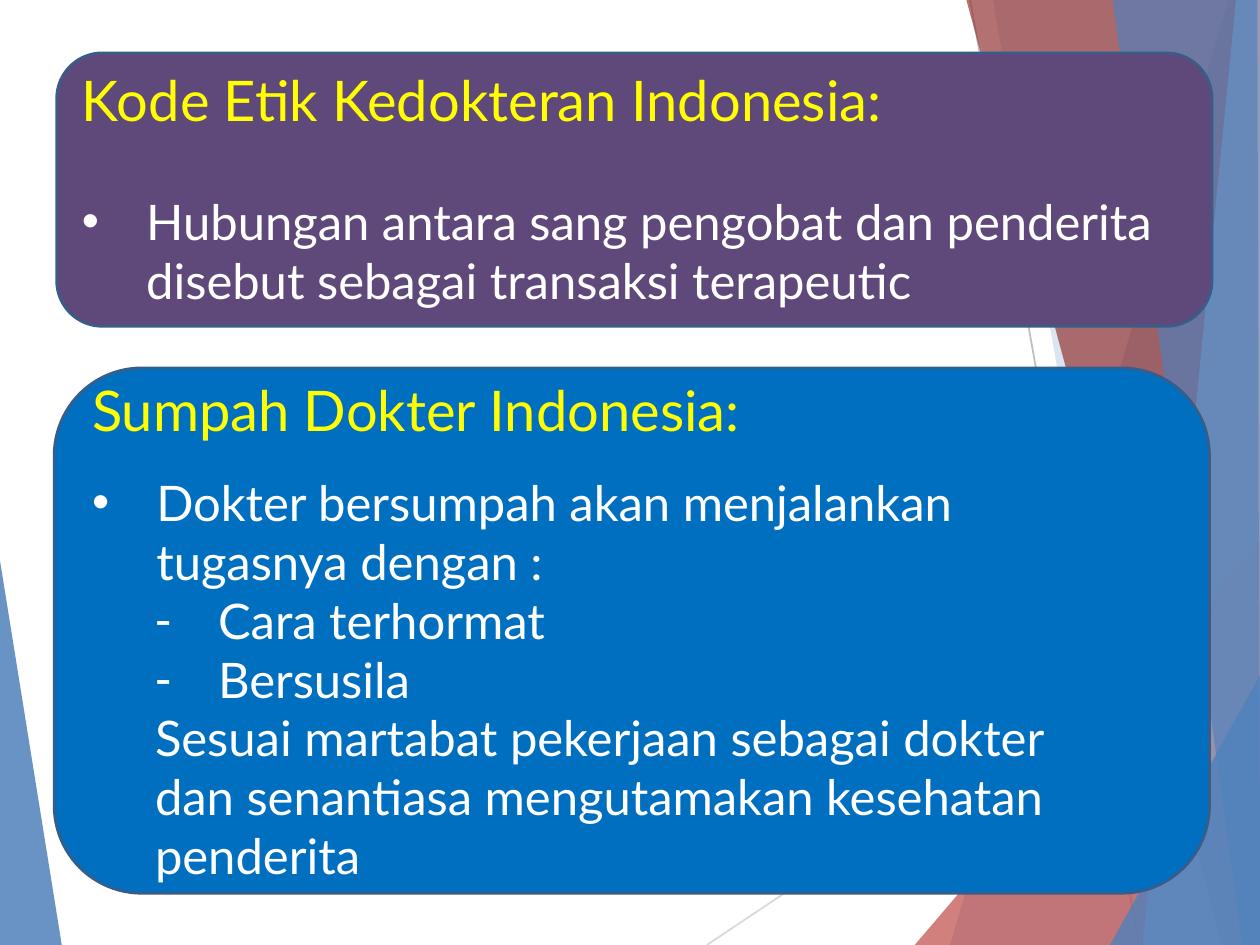
"""Build a slide on the Indonesian medical code of ethics and doctor's oath."""
from pptx import Presentation
from pptx.dml.color import RGBColor
from pptx.enum.shapes import MSO_CONNECTOR as Connector, MSO_SHAPE as Shape
from pptx.enum.text import MSO_ANCHOR as Anchor, MSO_AUTO_SIZE as AutoSize, PP_ALIGN as Align
from pptx.oxml.ns import qn
from pptx.oxml.xmlchemy import OxmlElement as make_element
from pptx.util import Inches, Pt

FONT = "Lato"
BLUE = RGBColor(0x4F, 0x81, 0xBC)
PALE_BLUE = RGBColor(0x94, 0xB3, 0xD6)
RED = RGBColor(0xC0, 0x50, 0x4D)
DARK_RED = RGBColor(0x94, 0x37, 0x35)
LIGHT_GRAY = RGBColor(0xD9, 0xD9, 0xD9)
GRAY = RGBColor(0xBE, 0xBE, 0xBE)
PURPLE = RGBColor(0x5F, 0x49, 0x7A)
PANEL_BLUE = RGBColor(0x00, 0x6F, 0xC0)
BORDER = RGBColor(0x38, 0x5D, 0x89)
YELLOW = RGBColor(0xFF, 0xFF, 0x00)
WHITE = RGBColor(0xFF, 0xFF, 0xFF)

WIDTH, HEIGHT = 10, 7.5
PANEL_WIDTH = 9.17
HEADING_SIZE, TEXT_SIZE = 32, 28

RAYS = [
    ((7.7, 0), (9.04, HEIGHT), GRAY),
    ((5.61, HEIGHT), (WIDTH, 4.57), LIGHT_GRAY),
]
LEFT_SHARD = ([(0, 4.45), (0, HEIGHT), (0.49, HEIGHT)], BLUE, 85)
RIGHT_SHARDS = [
    ([(9.75, 0), (7.54, HEIGHT), (WIDTH, HEIGHT), (WIDTH, 0)], BLUE, 30),
    ([(WIDTH, 0), (7.88, 0), (9.19, HEIGHT), (WIDTH, HEIGHT)], BLUE, 20),
    ([(WIDTH, 4.29), (7.26, HEIGHT), (WIDTH, HEIGHT)], RED, 72),
    ([(WIDTH, 0), (7.67, 0), (9.7, HEIGHT), (WIDTH, HEIGHT)], DARK_RED, 70),
    ([(WIDTH, 0), (9.81, 0), (9.07, HEIGHT), (WIDTH, HEIGHT)], PALE_BLUE, 70),
    ([(9.98, 0), (8.83, 0), (9.86, HEIGHT), (WIDTH, HEIGHT), (9.98, 0.27)], BLUE, 65),
    ([(WIDTH, 5.36), (8.81, HEIGHT), (WIDTH, HEIGHT)], BLUE, 80),
]


def add_shard(page, points, color, opacity):
    """Draw a translucent polygon without an outline."""
    corners = [(Inches(x), Inches(y)) for x, y in points]
    builder = page.shapes.build_freeform(*corners[0])
    builder.add_line_segments(corners[1:], close=True)
    shard = builder.convert_to_shape()
    shard.shadow.inherit = False
    shard.fill.solid()
    shard.fill.fore_color.rgb = color
    shard.line.fill.background()
    alpha = make_element("a:alpha")
    alpha.set("val", str(opacity * 1000))
    shard.element.spPr.find(".//" + qn("a:srgbClr")).append(alpha)


def add_ray(page, start, end, color):
    """Draw a thin straight line between two points."""
    ends = [Inches(value) for value in (*start, *end)]
    ray = page.shapes.add_connector(Connector.STRAIGHT, *ends)
    ray.line.color.rgb = color
    ray.line.width = Pt(1)
    ray.element.spPr.append(make_element("a:effectLst"))


def add_panel(page, left, top, height, color):
    """Draw a rounded panel with a blue border."""
    panel = page.shapes.add_shape(
        Shape.ROUNDED_RECTANGLE, Inches(left), Inches(top), Inches(PANEL_WIDTH), Inches(height)
    )
    panel.shadow.inherit = False
    panel.fill.solid()
    panel.fill.fore_color.rgb = color
    panel.line.color.rgb = BORDER
    panel.line.width = Pt(1.5)


def place_text(box, left, top, width, height):
    """Move a placeholder to the front, position it and return its text frame."""
    box.element.getparent().append(box.element)
    box.left, box.top, box.width, box.height = map(Inches, (left, top, width, height))
    frame = box.text_frame
    frame.margin_left = frame.margin_right = frame.margin_bottom = 0
    frame.margin_top = Inches(0.01)
    frame.vertical_anchor = Anchor.TOP
    frame.auto_size = AutoSize.NONE
    frame.word_wrap = True
    return frame


def write(para, text, size=TEXT_SIZE, color=WHITE, bullet=None, margin=0, hang=0, right=0, before=0):
    """Fill a paragraph with one styled run, its bullet and its indents."""
    properties = para._p.get_or_add_pPr()
    properties.set("marL", str(Inches(margin)))
    properties.set("marR", str(Inches(right)))
    properties.set("indent", str(-Inches(hang)))
    mark = make_element("a:buChar" if bullet else "a:buNone")
    if bullet:
        mark.set("char", bullet)
    properties.append(mark)
    para.alignment = Align.LEFT
    para.space_before = Pt(before)
    span = para.add_run()
    span.text = text
    span.font.name = FONT
    span.font.size = Pt(size)
    span.font.color.rgb = color


def write_body(frame):
    """Write the ethics statement and the oath."""
    dash = dict(bullet="-", margin=1.09, hang=0.5)
    lines = [
        ("Hubungan antara sang pengobat dan penderita disebut sebagai transaksi terapeutic",
         dict(bullet="•", margin=0.52, hang=0.51)),
        ("Sumpah Dokter Indonesia:",
         dict(size=HEADING_SIZE, color=YELLOW, margin=0.09, before=38)),
        ("Dokter bersumpah akan menjalankan tugasnya dengan :",
         dict(bullet="•", margin=0.6, hang=0.51, right=0.7, before=17)),
        ("Cara terhormat", dash),
        ("Bersusila", dash),
        ("Sesuai martabat pekerjaan sebagai dokter dan senantiasa mengutamakan kesehatan penderita",
         dict(margin=0.59, right=0.7)),
    ]
    for index, (text, style) in enumerate(lines):
        write(frame.add_paragraph() if index else frame.paragraphs[0], text, **style)


def main():
    """Assemble and save the slide."""
    deck = Presentation()
    deck.slide_width, deck.slide_height = Inches(WIDTH), Inches(HEIGHT)
    page = deck.slides.add_slide(deck.slide_layouts[1])
    title, body = page.shapes.title, page.placeholders[1]
    add_shard(page, *LEFT_SHARD)
    for ray in RAYS:
        add_ray(page, *ray)
    for shard in RIGHT_SHARDS:
        add_shard(page, *shard)
    add_panel(page, 0.45, 0.42, 2.17, PURPLE)
    add_panel(page, 0.43, 2.92, 4.17, PANEL_BLUE)
    heading = place_text(title, 0.64, 0.51, 6.48, 0.56)
    write(heading.paragraphs[0], "Kode Etik Kedokteran Indonesia:",
          size=HEADING_SIZE, color=YELLOW, margin=0.01)
    write_body(place_text(body, 0.64, 1.51, 8.69, 5.51))
    deck.save("out.pptx")


if __name__ == "__main__":
    main()
